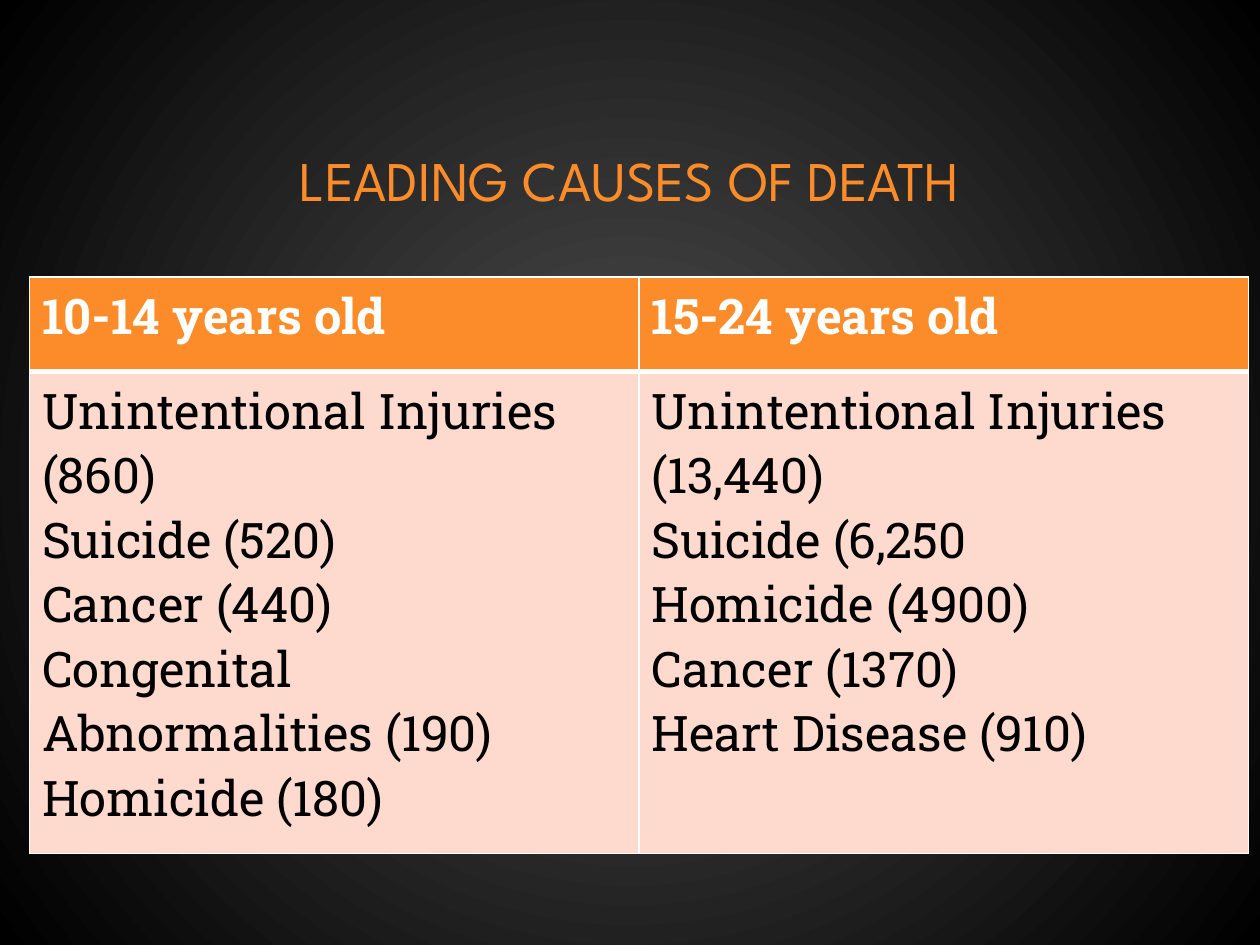
import pptx
import pptx.dml.color
import pptx.enum.text
import pptx.oxml
import pptx.oxml.ns
import pptx.util
from pptx.dml.color import RGBColor
from pptx.util import Pt

ORANGE = RGBColor(0xFB, 0x8C, 0x29)
PINK = RGBColor(0xFD, 0xDA, 0xCD)
WHITE = RGBColor(0xFF, 0xFF, 0xFF)
BLACK = RGBColor(0, 0, 0)
GRAY = RGBColor(0x50, 0x50, 0x50)

TITLE_FONT = {"name": "League Spartan", "size": Pt(32), "bold": False}
TABLE_FONT = {"name": "Roboto Slab", "size": Pt(28)}
HEADER_FONT = {**TABLE_FONT, "bold": True}
BODY_FONT = {**TABLE_FONT, "bold": False}

CAUSES = {
    "10-14 years old": [
        "Unintentional Injuries (860)",
        "Suicide (520)",
        "Cancer (440)",
        "Congenital Abnormalities (190)",
        "Homicide (180)",
    ],
    "15-24 years old": [
        "Unintentional Injuries (13,440)",
        "Suicide (6,250",
        "Homicide (4900)",
        "Cancer (1370)",
        "Heart Disease (910)",
    ],
}


def set_attrs(obj, values):
    for name, value in values.items():
        setattr(obj, name, value)


def write_lines(tf, lines, font, color):
    tf.text = "\n".join(lines)
    for p in tf.paragraphs:
        for r in p.runs:
            set_attrs(r.font, font)
            r.font.color.rgb = color


def set_radial_background(s, inner, outer):
    fill = s.background.fill
    fill.gradient()
    for stop, color, position in zip(fill.gradient_stops, (inner, outer), (0, 1)):
        stop.color.rgb = color
        stop.position = position
    grad = next(s._element.iter(pptx.oxml.ns.qn("a:gradFill")))
    linear = grad.find(pptx.oxml.ns.qn("a:lin"))
    grad.replace(linear, pptx.oxml.parse_xml(
        f'<a:path {pptx.oxml.ns.nsdecls("a")} path="circle">'
        '<a:fillToRect l="50000" t="50000" r="50000" b="50000"/></a:path>'))


def add_title(s, text):
    sp = s.shapes.title
    set_attrs(sp, {"left": Pt(113.76), "top": Pt(63.36),
                   "width": Pt(492.48), "height": Pt(82.8)})
    tf = sp.text_frame
    set_attrs(tf, {"word_wrap": True,
                   "auto_size": pptx.enum.text.MSO_AUTO_SIZE.NONE,
                   "vertical_anchor": pptx.enum.text.MSO_ANCHOR.MIDDLE})
    write_lines(tf, [text], TITLE_FONT, ORANGE)
    set_attrs(tf.paragraphs[0], {"alignment": pptx.enum.text.PP_ALIGN.CENTER,
                                 "line_spacing": 0.9})


def set_borders(cell, widths):
    """Draw white borders; widths maps the sides L, R, T, B to points."""
    tc_pr = cell._tc.get_or_add_tcPr()
    for side, width in widths.items():
        tc_pr.append(pptx.oxml.parse_xml(
            f'<a:ln{side} {pptx.oxml.ns.nsdecls("a")} w="{Pt(width)}">'
            f'<a:solidFill><a:srgbClr val="{WHITE}"/></a:solidFill></a:ln{side}>'))


def fill_cell(cell, lines, font, color, background, borders):
    write_lines(cell.text_frame, lines, font, color)
    set_borders(cell, borders)
    cell.fill.solid()
    cell.fill.fore_color.rgb = background


def add_causes_table(s):
    frame = s.shapes.add_table(2, len(CAUSES), Pt(16.8), Pt(158.4), Pt(696.6), Pt(329.4))
    table = frame.table
    for column in table.columns:
        column.width = Pt(348.3)
    for row, height in zip(table.rows, (54, 275.4)):
        row.height = Pt(height)
    for i, (age_group, causes) in enumerate(CAUSES.items()):
        fill_cell(table.cell(0, i), [age_group], HEADER_FONT, WHITE, ORANGE,
                  {"L": 1, "R": 1, "T": 1, "B": 3})
        fill_cell(table.cell(1, i), causes, BODY_FONT, BLACK, PINK,
                  {"L": 1, "R": 1, "T": 3, "B": 1})


def main():
    prs = pptx.Presentation()
    set_attrs(prs, {"slide_width": Pt(720), "slide_height": Pt(540)})
    s = prs.slides.add_slide(prs.slide_layouts[5])
    set_radial_background(s, GRAY, BLACK)
    add_title(s, "LEADING CAUSES OF DEATH")
    add_causes_table(s)
    prs.save("out.pptx")


if __name__ == "__main__":
    main()
